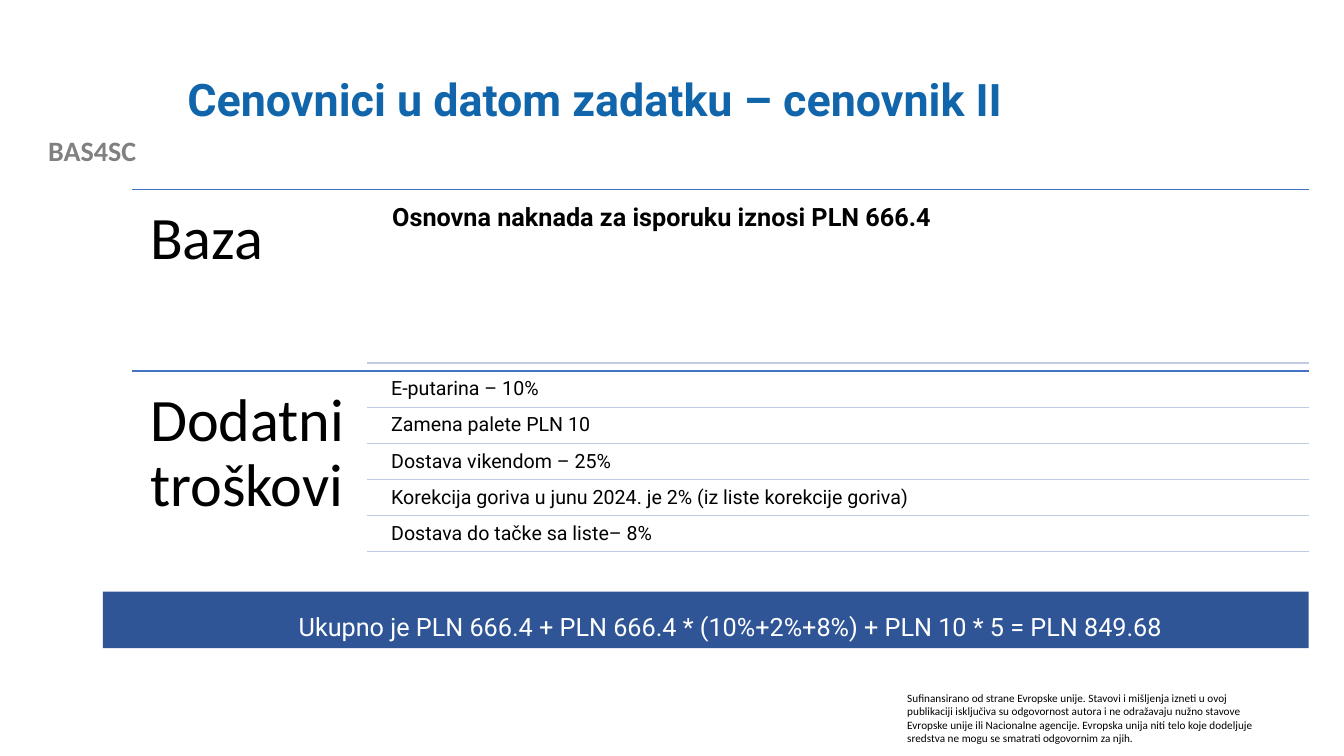
from dataclasses import dataclass

from lxml.etree import SubElement
from pptx import Presentation
from pptx.dml.color import RGBColor
from pptx.enum.shapes import MSO_CONNECTOR, MSO_SHAPE
from pptx.enum.text import MSO_ANCHOR, PP_ALIGN
from pptx.oxml.ns import qn
from pptx.slide import Slide
from pptx.text.text import TextFrame
from pptx.util import Inches, Pt

COLORS = {
    "title": "1065AB",
    "tag": "808080",
    "text": "000000",
    "light": "FFFFFF",
    "bar": "2F5597",
    "rule": "4472C4",
    "thin": "C1C9E4",
}
LEFT, RIGHT = 1.31, 12.98
THIN_X, ITEM_X = 3.64, 3.82
BASE_Y, COST_Y = 1.88, 3.68
ITEM_H, STEP = 0.34, 0.358
COSTS = [
    "E-putarina – 10%",
    "Zamena palete PLN 10",
    "Dostava vikendom – 25%",
    "Korekcija goriva u junu 2024. je 2% (iz liste korekcije goriva)",
    "Dostava do tačke sa liste– 8%",
]
NOTE = (
    "Sufinansirano od strane Evropske unije. Stavovi i mišljenja izneti u ovoj "
    "publikaciji isključiva su odgovornost autora i ne odražavaju nužno stavove "
    "Evropske unije ili Nacionalne agencije. Evropska unija niti telo koje "
    "dodeljuje sredstva ne mogu se smatrati odgovornim za njih."
)
TOTAL = "Ukupno je PLN 666.4 + PLN 666.4 * (10%+2%+8%) + PLN 10 * 5 = PLN 849.68"


@dataclass
class Label:
    text: str
    left: float
    top: float
    width: float
    height: float
    size: float
    font: str = "Roboto"
    color: str = "text"
    bold: bool = False
    align: PP_ALIGN = PP_ALIGN.LEFT
    anchor: MSO_ANCHOR = MSO_ANCHOR.TOP
    space: float = 1.0
    pad: float | None = None


@dataclass
class Rule:
    left: float
    top: float
    color: str


def shade(name: str) -> RGBColor:
    return RGBColor.from_string(COLORS[name])


def fill_text(frame: TextFrame, label: Label) -> None:
    frame.word_wrap = True
    frame.vertical_anchor = label.anchor
    if label.pad is not None:
        frame.margin_left = frame.margin_right = Inches(label.pad)
        frame.margin_top = frame.margin_bottom = Inches(label.pad)
    para = frame.paragraphs[0]
    para.text = label.text
    para.alignment = label.align
    para.line_spacing = label.space
    font = para.runs[0].font
    font.name = label.font
    font.size = Pt(label.size)
    font.bold = label.bold
    font.color.rgb = shade(label.color)


def add_label(slide: Slide, label: Label) -> None:
    box = slide.shapes.add_textbox(
        Inches(label.left), Inches(label.top), Inches(label.width), Inches(label.height)
    )
    fill_text(box.text_frame, label)


def add_bar(slide: Slide, label: Label) -> None:
    """Draw a filled bar whose text has a first-line indent."""
    bar = slide.shapes.add_shape(
        MSO_SHAPE.RECTANGLE,
        Inches(label.left), Inches(label.top), Inches(label.width), Inches(label.height),
    )
    bar.shadow.inherit = False
    bar.fill.solid()
    bar.fill.fore_color.rgb = shade("bar")
    bar.line.fill.background()
    fill_text(bar.text_frame, label)
    para = bar.text_frame.paragraphs[0]
    para.space_after = Pt(6)
    props = para._p.get_or_add_pPr()
    props.set("marL", "0")
    props.set("indent", str(Inches(0.49)))


def add_rule(slide: Slide, rule: Rule) -> None:
    line = slide.shapes.add_connector(
        MSO_CONNECTOR.STRAIGHT,
        Inches(rule.left), Inches(rule.top), Inches(RIGHT), Inches(rule.top),
    )
    line.line.color.rgb = shade(rule.color)
    line.line.width = Pt(1)
    SubElement(line._element.spPr, qn("a:effectLst"))


def main() -> None:
    deck = Presentation()
    deck.slide_width, deck.slide_height = Inches(13.33), Inches(7.5)
    slide = deck.slides.add_slide(deck.slide_layouts[6])

    labels = [
        Label("BAS4SC", 0, 1.28, 1.83, 0.44, 20, "Calibri", "tag", True, PP_ALIGN.CENTER),
        Label(NOTE, 8.9, 6.81, 3.7, 0.64, 8, "Calibri"),
        Label("Cenovnici u datom zadatku – cenovnik II", 1.76, 0.4, 10.66, 1.22, 32,
              color="title", bold=True, anchor=MSO_ANCHOR.MIDDLE, space=0.9),
        Label("Osnovna naknada za isporuku iznosi PLN 666.4", ITEM_X, 1.96,
              RIGHT - ITEM_X, 1.64, 18, bold=True, space=0.9, pad=0.07),
    ]
    rules = [Rule(THIN_X, 3.6, "thin")]
    for head, top in (("Baza", BASE_Y), ("Dodatni troškovi", COST_Y)):
        rules.append(Rule(LEFT, top, "rule"))
        labels.append(Label(head, LEFT, top, THIN_X - LEFT, 1.8, 43, "Calibri",
                            space=0.9, pad=0.18))
    for row, cost in enumerate(COSTS):
        top = COST_Y + 0.02 + row * STEP
        labels.append(Label(cost, ITEM_X, top, RIGHT - ITEM_X, ITEM_H, 14,
                            space=0.9, pad=0.06))
        rules.append(Rule(THIN_X, top + ITEM_H, "thin"))

    add_bar(slide, Label(TOTAL, 1.02, 5.87, RIGHT - 1.02, 0.56, 18, color="light",
                         align=PP_ALIGN.CENTER, space=1.5))
    for rule in rules:
        add_rule(slide, rule)
    for label in labels:
        add_label(slide, label)
    deck.save("out.pptx")


if __name__ == "__main__":
    main()
